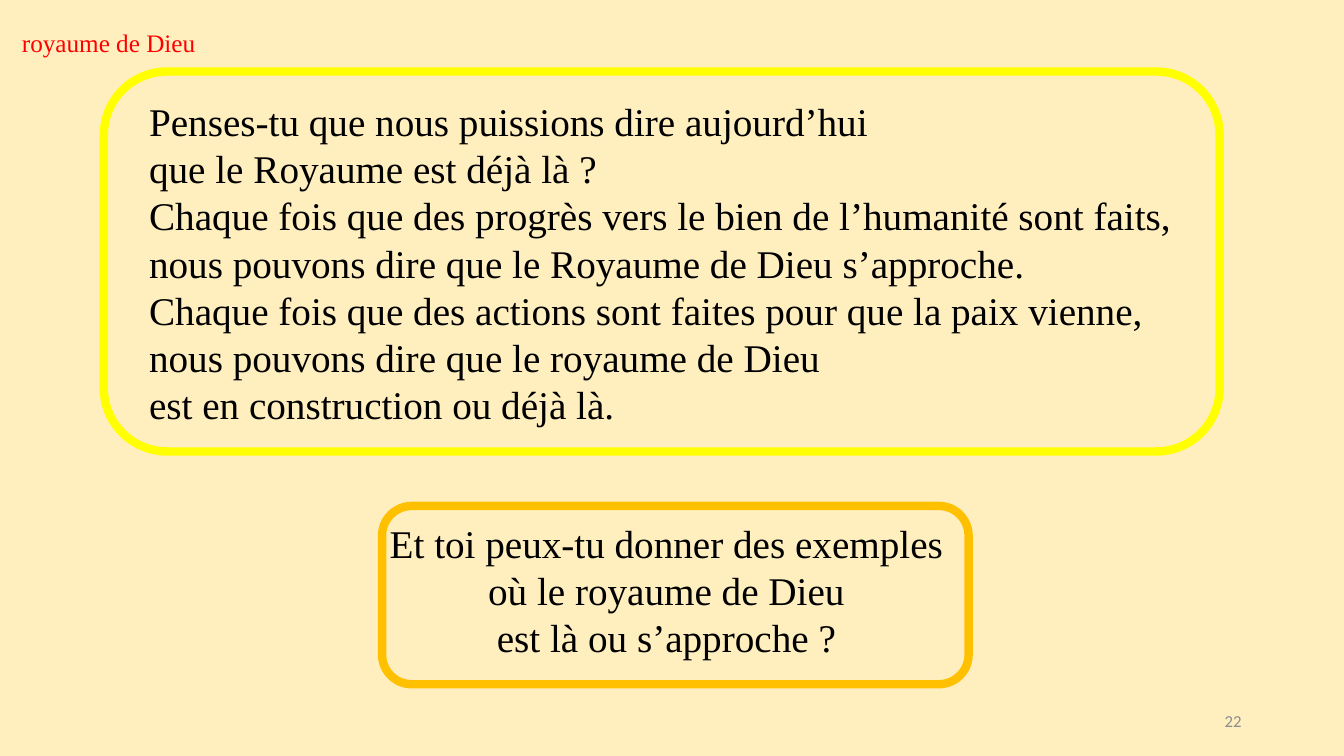
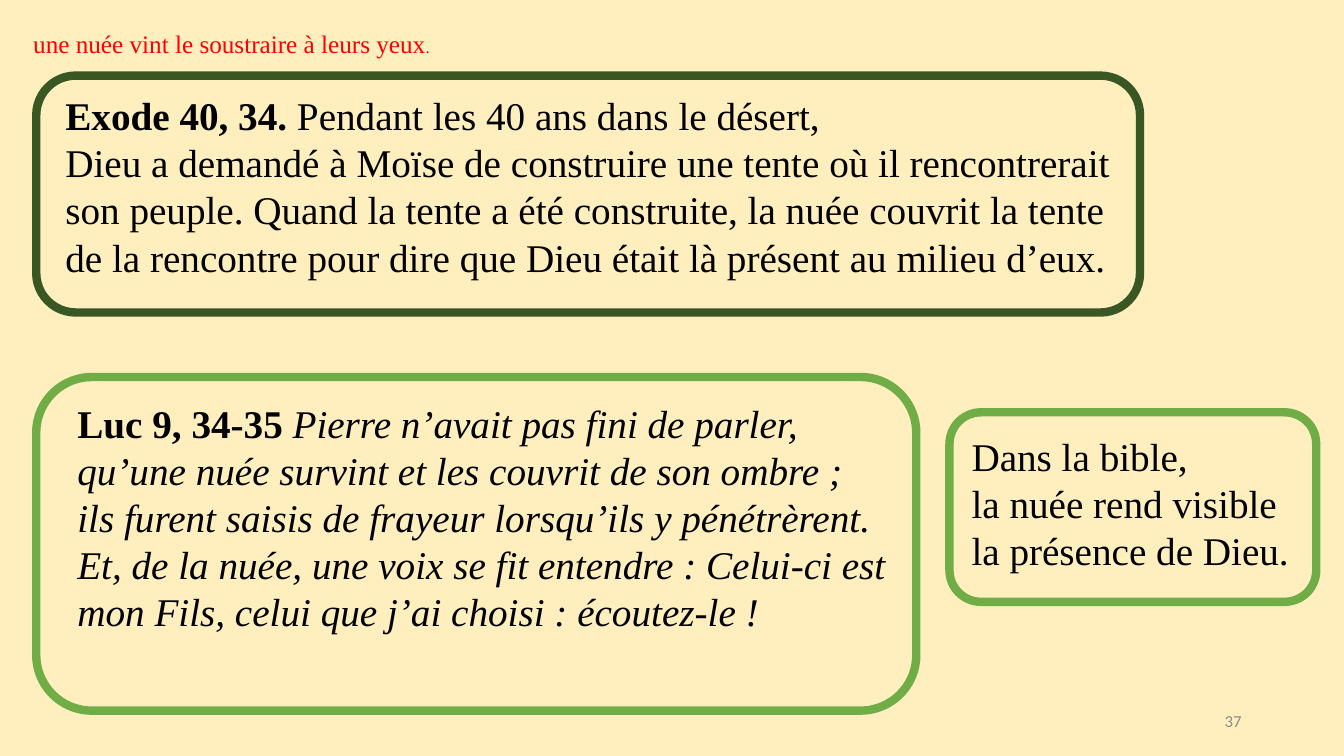
"""Build two catechism slides with outlined text cards on a pale yellow ground."""
import dataclasses

import pptx
import pptx.dml.color
import pptx.enum.shapes
import pptx.enum.text
import pptx.util


@dataclasses.dataclass(frozen=True)
class Theme:
    background: str = "FFEFBF"
    black: str = "000000"
    red: str = "FF0000"
    dark_gray: str = "444444"
    gray: str = "8C8C8C"
    yellow: str = "FFFF00"
    amber: str = "FFC000"
    dark_green: str = "385723"
    green: str = "70AD47"
    serif: str = "Times New Roman"
    sans: str = "Calibri"
    body_size: int = 28
    title_size: int = 18
    small_size: int = 12
    outline: int = 6


theme = Theme()
Pt = pptx.util.Pt
Align = pptx.enum.text.PP_ALIGN
Anchor = pptx.enum.text.MSO_ANCHOR
rgb = pptx.dml.color.RGBColor.from_string

plain = (theme.serif, theme.body_size, theme.black, False, False)
bold = (theme.serif, theme.body_size, theme.black, True, False)
italic = (theme.serif, theme.body_size, theme.black, False, True)
title_style = (theme.serif, theme.title_size, theme.red, False, False)
title_stop = (theme.serif, theme.small_size, theme.dark_gray, False, False)
number_style = (theme.sans, theme.small_size, theme.gray, False, False)


def add_text(shapes, box, paragraphs, alignment=Align.LEFT, anchor=Anchor.TOP):
    frame = shapes.add_textbox(*map(Pt, box)).text_frame
    frame.word_wrap = True
    frame.vertical_anchor = anchor
    for index, runs in enumerate(paragraphs):
        paragraph = frame.add_paragraph() if index else frame.paragraphs[0]
        paragraph.alignment = alignment
        for text, (name, size, color, is_bold, is_italic) in runs:
            run = paragraph.add_run()
            run.text = text
            run.font.name = name
            run.font.size = Pt(size)
            run.font.color.rgb = rgb(color)
            run.font.bold = is_bold
            run.font.italic = is_italic


def add_card(slide, outline_box, color, text_box, paragraphs, alignment=Align.LEFT):
    group = slide.shapes.add_group_shape()
    card = group.shapes.add_shape(
        pptx.enum.shapes.MSO_SHAPE.ROUNDED_RECTANGLE, *map(Pt, outline_box))
    card.shadow.inherit = False
    card.fill.background()
    card.line.color.rgb = rgb(color)
    card.line.width = Pt(theme.outline)
    add_text(group.shapes, text_box, paragraphs, alignment)


kingdom_text = [
    [("Penses-tu que nous puissions dire aujourd’hui", plain)],
    [("que le Royaume est déjà là ?", plain)],
    [("Chaque fois que des progrès vers le bien de l’humanité sont faits, "
      "nous pouvons dire que le Royaume de Dieu s’approche.", plain)],
    [("Chaque fois que des actions sont faites pour que la paix vienne, "
      "nous pouvons dire que le royaume de Dieu", plain)],
    [("est en construction ou déjà là.", plain)],
]
question_text = [
    [("Et toi peux-tu donner des exemples ", plain)],
    [("où le royaume de Dieu ", plain)],
    [("est là ou s’approche ? ", plain)],
]
exodus_text = [
    [("Exode 40, 34.", bold), (" Pendant les 40 ans dans le désert,", plain)],
    [("Dieu a demandé à Moïse de construire une tente où il rencontrerait "
      "son peuple. Quand la tente a été construite, la nuée couvrit la tente "
      "de la rencontre pour dire que Dieu était là présent au milieu d’eux.", plain)],
]
bible_text = [
    [("Dans la bible,", plain)],
    [("la nuée rend visible la présence de Dieu.", plain)],
]
luke_text = [
    [("Luc 9, 34-35 ", bold),
     ("Pierre n’avait pas fini de parler, qu’une nuée survint et les couvrit "
      "de son ombre ; ils furent saisis de frayeur lorsqu’ils y pénétrèrent. "
      "Et, de la nuée, une voix se fit entendre : Celui-ci est mon Fils, "
      "celui que j’ai choisi : écoutez-le !", italic)],
]

pages = [
    ("22", (8.6, 15.8, 160, 29), [("royaume de Dieu", title_style)], [
        ((74.2, 51.1, 797, 271.4), theme.yellow,
         (99.4, 66.2, 747.4, 242), kingdom_text, Align.LEFT),
        ((272.9, 361.4, 419, 127.4), theme.amber,
         (267.8, 367.2, 423.4, 108.7), question_text, Align.CENTER),
    ]),
    ("37", (16.6, 16.6, 320, 29),
     [("une nuée vint le soustraire à leurs yeux", title_style), (".", title_stop)], [
        ((25.9, 54, 788.4, 169.2), theme.dark_green,
         (39.6, 61.9, 761.8, 154), exodus_text, Align.LEFT),
        ((678.2, 294.5, 262, 135.4), theme.green,
         (686.9, 305.3, 249.8, 138.2), bible_text, Align.LEFT),
        ((25.9, 269.3, 628.6, 238.3), theme.green,
         (48.2, 281.5, 593.3, 233.3), luke_text, Align.LEFT),
    ]),
]

presentation = pptx.Presentation()
presentation.slide_width = Pt(960)
presentation.slide_height = Pt(540)

for number, title_box, title_runs, cards in pages:
    slide = presentation.slides.add_slide(presentation.slide_layouts[6])
    slide.background.fill.solid()
    slide.background.fill.fore_color.rgb = rgb(theme.background)
    add_text(slide.shapes, (678, 500.5, 216, 28.75), [[(number, number_style)]],
             Align.RIGHT, Anchor.MIDDLE)
    add_text(slide.shapes, title_box, [title_runs])
    for card in cards:
        add_card(slide, *card)

presentation.save("out.pptx")
